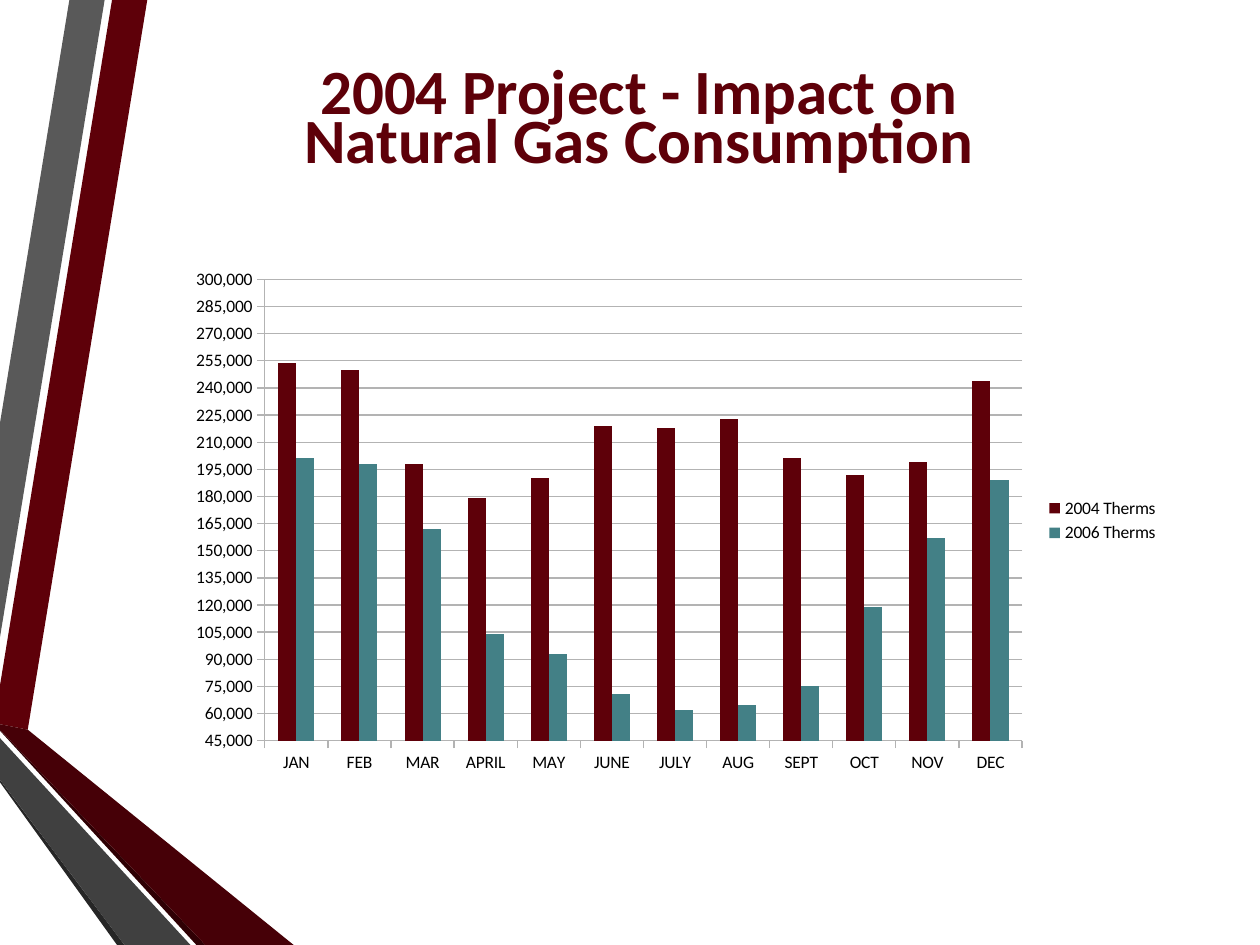
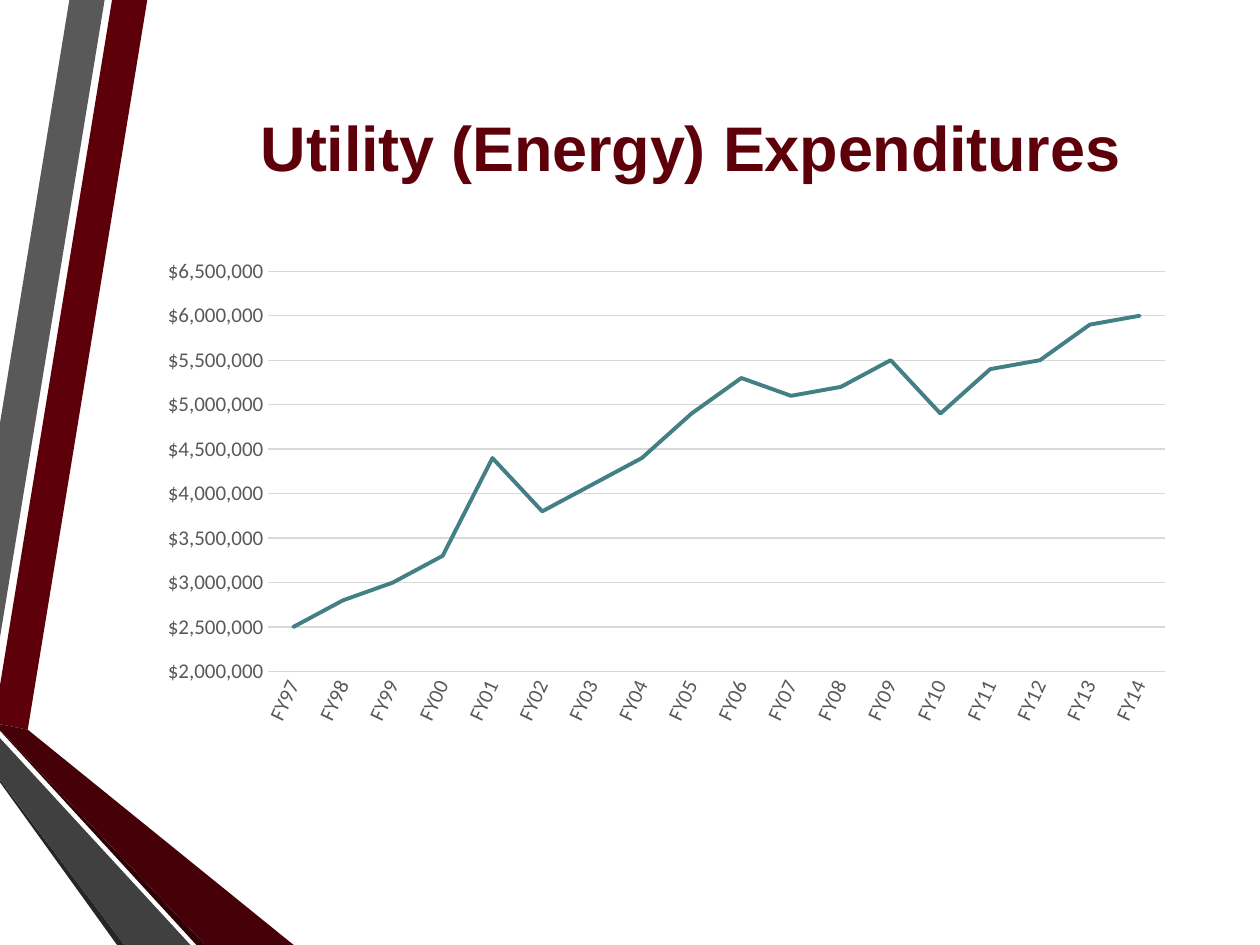
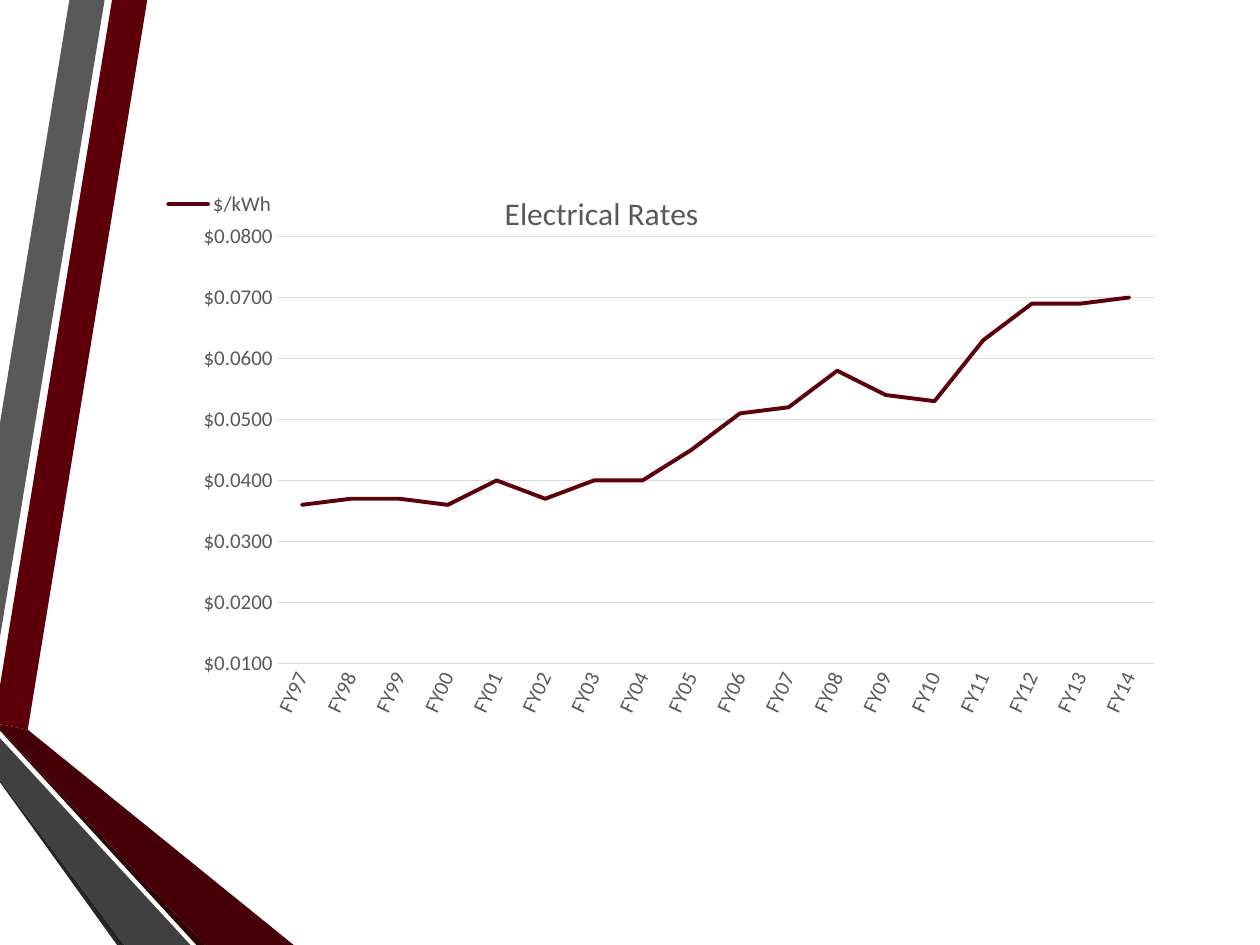
"""Build three slides on campus energy use, each with a chart."""
from dataclasses import dataclass
from typing import NamedTuple

from lxml.etree import SubElement
from pptx import Presentation
from pptx.chart.chart import Chart
from pptx.chart.data import CategoryChartData
from pptx.dml.color import RGBColor
from pptx.enum.chart import XL_CHART_TYPE, XL_LEGEND_POSITION, XL_TICK_MARK
from pptx.enum.text import MSO_ANCHOR, MSO_AUTO_SIZE, PP_ALIGN
from pptx.oxml import parse_xml
from pptx.oxml.ns import nsdecls, qn
from pptx.util import Cm, Pt


@dataclass(frozen=True)
class Theme:
    red: str = "5E0009"
    teal: str = "438086"
    slate: str = "595959"
    coal: str = "404040"
    soot: str = "262626"
    wine: str = "460007"
    dusk: str = "2F0004"
    black: str = "000000"
    mist: str = "D9D9D9"
    ash: str = "B3B3B3"
    font: str = "Calibri"
    sans: str = "Arial"
    head: float = 36
    name: float = 18
    label: float = 12
    small: float = 10
    rule: float = 0.75
    curve: float = 2.25


THEME = Theme()


class Box(NamedTuple):
    left: float
    top: float
    width: float
    height: float


class Band(NamedTuple):
    color: str
    points: list[tuple[float, float]]


class Line(NamedTuple):
    name: str
    color: str
    values: list[float]


class Scale(NamedTuple):
    low: float
    high: float
    step: float
    form: str


@dataclass(frozen=True)
class Title:
    text: str
    box: Box
    inset: float
    font: str = THEME.font
    pitch: float | None = None
    track: int = 0


@dataclass(frozen=True)
class Graph:
    kind: XL_CHART_TYPE
    box: Box
    plot: Box
    labels: list[str]
    lines: list[Line]
    scale: Scale
    size: float = THEME.label
    color: str = THEME.slate
    grid: str = THEME.mist
    title: str = ""
    title_box: Box | None = None
    legend: XL_LEGEND_POSITION | None = None
    legend_box: Box | None = None


@dataclass(frozen=True)
class Page:
    graph: Graph
    title: Title | None = None


BANDS = [
    Band(THEME.red, [(0, 13.82), (0, 14.6), (0.56, 14.71), (2.97, 0), (2.26, 0)]),
    Band(THEME.slate, [(2.11, 0), (1.4, 0), (0, 8.53), (0, 12.85)]),
    Band(THEME.soot, [(0, 15.72), (0, 15.77), (2.36, 19.05), (2.51, 19.05)]),
    Band(THEME.dusk, [(0, 14.71), (0, 14.73), (3.96, 19.05), (4.14, 19.05)]),
    Band(THEME.wine, [(0, 14.71), (4.14, 19.05), (5.92, 19.05), (0.56, 14.71), (0, 14.6)]),
    Band(THEME.coal, [(0, 15.72), (2.51, 19.05), (3.84, 19.05), (0, 14.88)]),
]

MONTHS = ["JAN", "FEB", "MAR", "APRIL", "MAY", "JUNE",
          "JULY", "AUG", "SEPT", "OCT", "NOV", "DEC"]
YEARS = [f"FY{year % 100:02}" for year in range(1997, 2015)]

PAGES = [
    Page(
        Graph(
            XL_CHART_TYPE.COLUMN_CLUSTERED,
            Box(3.53, 5.21, 20.09, 10.57),
            Box(0.09, 0.04, 0.76, 0.88),
            MONTHS,
            [
                Line("2004 Therms", THEME.red,
                     [254000, 250000, 198000, 179000, 190000, 219000,
                      218000, 223000, 201000, 192000, 199000, 244000]),
                Line("2006 Therms", THEME.teal,
                     [201000, 198000, 162000, 104000, 93000, 71000,
                      62000, 65000, 75000, 119000, 157000, 189000]),
            ],
            Scale(45000, 300000, 15000, "#,##0"),
            size=THEME.small, color=THEME.black, grid=THEME.ash,
            legend=XL_LEGEND_POSITION.RIGHT,
        ),
        Title("2004 Project - Impact on\nNatural Gas Consumption",
              Box(4.39, 1.4, 16.99, 3.15), 0.18, pitch=27.8),
    ),
    Page(
        Graph(
            XL_CHART_TYPE.LINE,
            Box(2.77, 5.03, 21.13, 9.78),
            Box(0.125, 0.045, 0.855, 0.825),
            YEARS,
            [Line("Series 1", THEME.teal,
                  [2500000, 2800000, 3000000, 3300000, 4400000, 3800000,
                   4100000, 4400000, 4900000, 5300000, 5100000, 5200000,
                   5500000, 4900000, 5400000, 5500000, 5900000, 6000000])],
            Scale(2000000, 6500000, 500000, '"$"#,##0'),
        ),
        Title("Utility (Energy) Expenditures",
              Box(3.3, 1.93, 21.23, 1.8), 0.26, font=THEME.sans, track=-10),
    ),
    Page(
        Graph(
            XL_CHART_TYPE.LINE,
            Box(2.97, 3.15, 20.85, 12.09),
            Box(0.126, 0.134, 0.847, 0.712),
            YEARS,
            [Line("$/kWh", THEME.red,
                  [0.036, 0.037, 0.037, 0.036, 0.04, 0.037,
                   0.04, 0.04, 0.045, 0.051, 0.052, 0.058,
                   0.054, 0.053, 0.063, 0.069, 0.069, 0.07])],
            Scale(0.01, 0.08, 0.01, '"$"#,##0.0000'),
            title="Electrical Rates", title_box=Box(0.34, 0.05, 0.2, 0.06),
            legend=XL_LEGEND_POSITION.BOTTOM, legend_box=Box(0.01, 0.05, 0.12, 0.06),
        ),
    ),
]


def tint(code: str) -> RGBColor:
    return RGBColor.from_string(code)


def style(font, size: float, color: str, face: str = THEME.font, bold: bool = False) -> None:
    font.size = Pt(size)
    font.name = face
    font.bold = bold
    font.color.rgb = tint(color)


def write(frame, text: str, *, size: float, color: str, face: str = THEME.font,
          bold: bool = False, pitch: float | None = None, track: int = 0) -> None:
    frame.text = text
    for para in frame.paragraphs:
        para.alignment = PP_ALIGN.CENTER
        if pitch:
            para.line_spacing = Pt(pitch)
        for run in para.runs:
            style(run.font, size, color, face, bold)
            if track:
                run.font._element.set("spc", str(track))


def add_bands(deck, slide) -> None:
    tree = deck.slide_master.shapes.element
    for order, band in enumerate(BANDS):
        points = [(Cm(x), Cm(y)) for x, y in band.points]
        pen = slide.shapes.build_freeform(*points[0])
        pen.add_line_segments(points[1:], close=True)
        shape = pen.convert_to_shape()
        shape.shadow.inherit = False
        shape.fill.solid()
        shape.fill.fore_color.rgb = tint(band.color)
        shape.line.fill.background()
        shape.name = f"Band {order + 1}"
        shape.element.find(f".//{qn('p:cNvPr')}").set("id", str(100 + order))
        tree.insert(2 + order, shape.element)


def add_title(slide, title: Title) -> None:
    shape = slide.shapes.title
    shape.left, shape.top, shape.width, shape.height = map(Cm, title.box)
    frame = shape.text_frame
    frame.word_wrap = True
    frame.auto_size = MSO_AUTO_SIZE.NONE
    frame.vertical_anchor = MSO_ANCHOR.TOP
    frame.margin_top = Cm(title.inset)
    frame.margin_bottom = 0
    write(frame, title.text, size=THEME.head, color=THEME.red, face=title.font,
          bold=True, pitch=title.pitch, track=title.track)


def place(chart: Chart, part: str, index: int, box: Box) -> None:
    host = chart.element.find(f".//{qn('c:' + part)}")
    for old in host.findall(qn("c:layout")):
        host.remove(old)
    layout = parse_xml(f"<c:layout {nsdecls('c')}/>")
    manual = SubElement(layout, qn("c:manualLayout"))
    rules = {"xMode": "edge", "yMode": "edge", "x": box.left, "y": box.top}
    if part == "plotArea":
        rules = {"layoutTarget": "inner"} | rules
    if part != "title":
        rules |= {"w": box.width, "h": box.height}
    for key, value in rules.items():
        SubElement(manual, qn(f"c:{key}")).set("val", str(value))
    host.insert(index, layout)


def format_axes(chart: Chart, graph: Graph) -> None:
    value, base = chart.value_axis, chart.category_axis
    bars = graph.kind == XL_CHART_TYPE.COLUMN_CLUSTERED
    value.minimum_scale, value.maximum_scale, value.major_unit = graph.scale[:3]
    value.has_major_gridlines = True
    value.tick_labels.number_format = graph.scale.form
    value.tick_labels.number_format_is_linked = False
    for axis in (value, base):
        axis.major_tick_mark = XL_TICK_MARK.OUTSIDE if bars else XL_TICK_MARK.NONE
        axis.minor_tick_mark = XL_TICK_MARK.NONE
        style(axis.tick_labels.font, graph.size, graph.color)
    for line in (value.major_gridlines.format.line, base.format.line, value.format.line):
        line.color.rgb = tint(graph.grid)
        line.width = Pt(THEME.rule)
    if not bars:
        value.format.line.fill.background()
        turn = base._element.find(f".//{qn('a:bodyPr')}")
        turn.set("rot", "-3900000")
        turn.set("vert", "horz")


def format_lines(chart: Chart, graph: Graph) -> None:
    plot = chart.plots[0]
    plot.vary_by_categories = False
    bars = graph.kind == XL_CHART_TYPE.COLUMN_CLUSTERED
    if bars:
        plot.gap_width = 150
    for series, line in zip(plot.series, graph.lines):
        if bars:
            series.format.fill.solid()
            series.format.fill.fore_color.rgb = tint(line.color)
        else:
            series.smooth = False
            series.format.line.color.rgb = tint(line.color)
            series.format.line.width = Pt(THEME.curve)
            series.format.line._ln.set("cap", "rnd")


def add_graph(slide, graph: Graph) -> None:
    data = CategoryChartData()
    data.categories = graph.labels
    for line in graph.lines:
        data.add_series(line.name, line.values)
    chart = slide.shapes.add_chart(graph.kind, *map(Cm, graph.box), data).chart
    style(chart.font, THEME.small, THEME.black)
    format_axes(chart, graph)
    format_lines(chart, graph)
    place(chart, "plotArea", 0, graph.plot)
    chart.has_title = bool(graph.title)
    if graph.title:
        write(chart.chart_title.text_frame, graph.title, size=THEME.name, color=graph.color)
        place(chart, "title", 1, graph.title_box)
    chart.has_legend = graph.legend is not None
    if graph.legend is not None:
        chart.legend.position = graph.legend
        chart.legend.include_in_layout = False
        style(chart.legend.font, graph.size, graph.color)
        if graph.legend_box:
            place(chart, "legend", 1, graph.legend_box)


def main() -> None:
    deck = Presentation()
    deck.slide_width, deck.slide_height = Cm(25.4), Cm(19.05)
    for page in PAGES:
        slide = deck.slides.add_slide(deck.slide_layouts[5 if page.title else 6])
        if page is PAGES[0]:
            add_bands(deck, slide)
        if page.title:
            add_title(slide, page.title)
        add_graph(slide, page.graph)
    deck.save("out.pptx")


if __name__ == "__main__":
    main()
